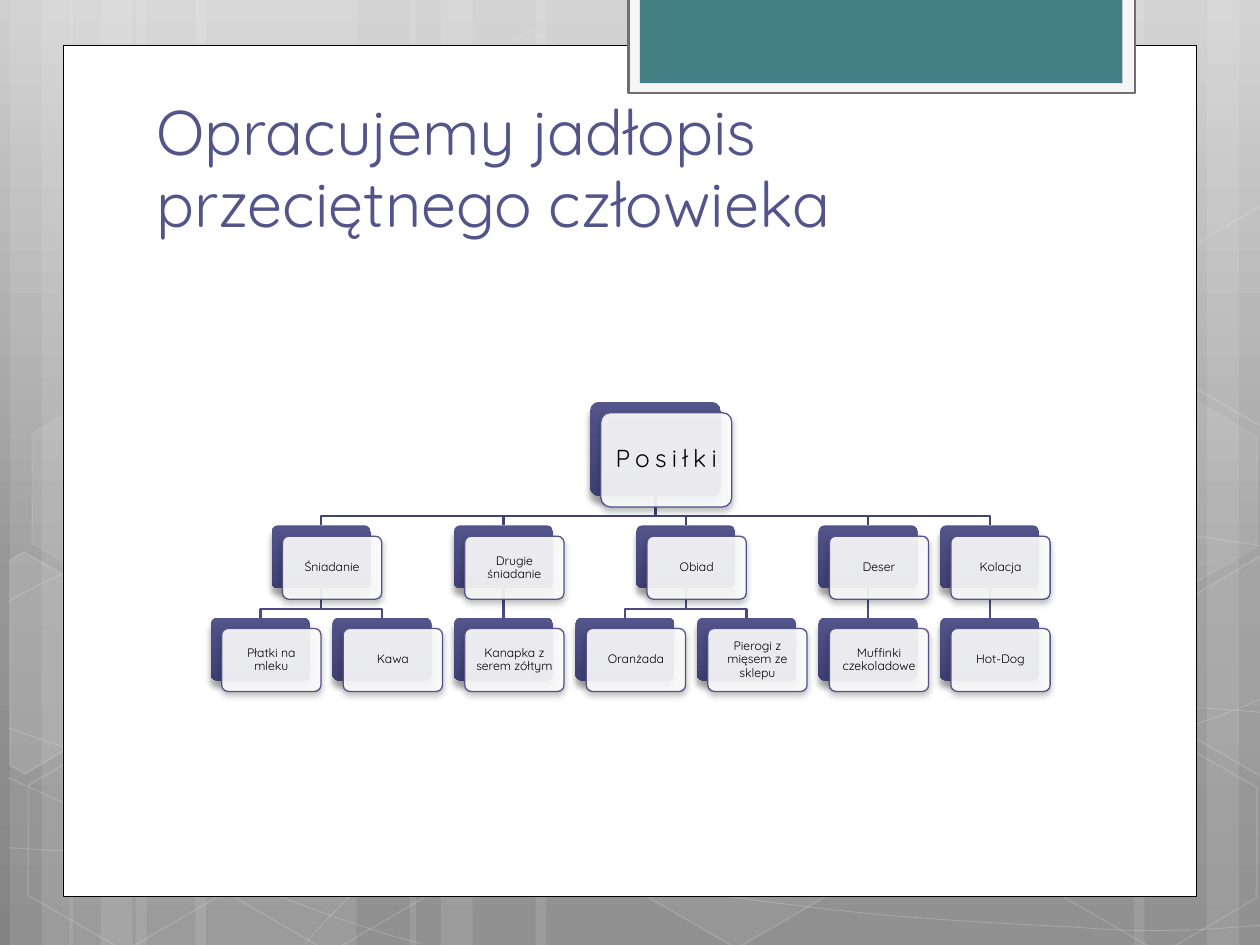
from lxml.etree import SubElement
from pptx import Presentation
from pptx.dml.color import RGBColor
from pptx.enum.shapes import MSO_CONNECTOR, MSO_SHAPE
from pptx.enum.text import MSO_ANCHOR, PP_ALIGN
from pptx.oxml.ns import qn
from pptx.util import Cm, Pt

FONT = "Quicksand"
COLORS = {
    "white": "FFFFFF", "black": "000000", "indigo": "53548A", "deep": "3E3F72",
    "branch": "42436F", "twig": "4B4C7D", "teal": "438086",
    "frame": "F5F5F5", "frame_line": "6F6F6F",
    "sky": "CFCFCF", "haze": "969696", "ground": "848484",
}

TITLE = "Opracujemy jadłopis przeciętnego człowieka"
ROOT = "Posiłki"
MEALS = [
    ("Śniadanie", ["Płatki na mleku", "Kawa"]),
    ("Drugie śniadanie", ["Kanapka z serem zółtym"]),
    ("Obiad", ["Oranżada", "Pierogi z mięsem ze sklepu"]),
    ("Deser", ["Muffinki czekoladowe"]),
    ("Kolacja", ["Hot-Dog"]),
]

# All lengths below are centimetres.
SLIDE_WIDTH, SLIDE_HEIGHT = 25.4, 19.05
STRIPES = [  # width, left edges
    (4.45, [2.74, 3.94, 18.62]),
    (1.27, [0.2, 1.4, 24.33, 8.26]),
    (2.12, [0.84, 2.03, 22.86, 8.89]),
    (7.82, [10.8]),
]
CURVES = [  # start point, then three points for each Bezier segment
    [(0.18, 17.09), (1.55, 17.17), (2.92, 17.25), (4.83, 17.22),
     (6.73, 17.2), (9.09, 17.15), (11.63, 16.89), (14.17, 16.64), (17.78, 16.15),
     (20.12, 15.67), (22.43, 15.19), (24.82, 14.43), (25.58, 14)],
    [(0.18, 12.12), (0.91, 11.71), (1.65, 11.33), (3.07, 10.95),
     (4.52, 10.57), (6.58, 10.01), (8.81, 9.83), (11.07, 9.65), (13.82, 9.63),
     (16.61, 9.83), (19.41, 10.03), (24.05, 10.82), (25.58, 11.02)],
    [(0.15, 15.67), (3.23, 17.07), (6.27, 18.47), (8.48, 19.02)],
    [(0.18, 14.68), (0.97, 14.96), (1.78, 15.24), (3.25, 15.65),
     (4.72, 16.03), (6.93, 16.66), (9.07, 17.09), (11.18, 17.53), (13.84, 17.98),
     (15.95, 18.24), (18.06, 18.52), (20.32, 18.62), (21.67, 18.69),
     (22.99, 18.8), (23.34, 18.75), (24, 18.75), (24.66, 18.72), (25.12, 18.67),
     (25.58, 18.64)],
    [(6.15, 19.02), (6.6, 18.52), (7.06, 18.01), (7.67, 17.55),
     (8.28, 17.09), (9.14, 16.59), (9.86, 16.23), (10.57, 15.88), (11, 15.72),
     (11.94, 15.47), (12.85, 15.22), (14.55, 14.86), (15.44, 14.68),
     (16.36, 14.5), (16.48, 14.45), (17.27, 14.45), (18.08, 14.38), (19.3, 14.3),
     (20.17, 14.27), (21.06, 14.25), (22.5, 14.27), (22.5, 14.27),
     (23.07, 14.27), (23.64, 14.27), (24.21, 14.27), (24.66, 14.3), (25.1, 14.33),
     (25.32, 14.35), (25.55, 14.38), (25.48, 14.35), (25.55, 14.38)],
]
HEXAGONS = [  # left, top, fill opacity, line opacity
    (8.48, 0.91, 4, 8), (12.62, 14.96, 6, 12), (0.28, 15.01, 0, 12),
    (0.36, 7.92, 7, 8), (4.42, 15.04, 0, 12), (19.13, 11.51, 10, 12),
    (21.18, 15.06, 0, 12), (21.18, 7.98, 7, 8),
]
CUT_HEXAGONS = [  # fill opacity, corners
    (10, [(0.2, 11.3), (0.48, 11.13), (2.44, 12.24), (2.41, 14.48), (0.51, 15.6), (0.2, 15.42)]),
    (4, [(23.52, 12.32), (25.43, 11.2), (25.63, 11.33), (25.63, 15.57), (25.45, 15.67), (23.52, 14.55)]),
    (0, [(23.52, 5.26), (25.43, 4.14), (25.65, 4.27), (25.63, 8.51), (25.45, 8.61), (23.52, 7.49)]),
]
PANELS = [  # left, top, width, height, fill, line, line width
    (1.27, 0.91, 22.86, 17.17, "white", "black", 0.5),
    (12.67, -0.05, 10.21, 1.93, "frame", "frame_line", 1.25),
    (12.9, -0.05, 9.73, 1.73, "teal", None, 0),
]

ROOT_SIZE, NODE_SIZE = (2.64, 1.9), (2, 1.27)
ROOT_TOP, MEAL_TOP, DISH_TOP = 8.1, 10.59, 12.45
FIRST_CENTER, DISH_PITCH = 5.25, 2.45
CARD_OFFSET, BEND_GAP = 0.22, 0.18


def rgb(name):
    return RGBColor.from_string(COLORS[name])


def add_alpha(solid_fill, opacity):
    SubElement(solid_fill[0], qn("a:alpha"), val=str(opacity * 1000))


def set_gradient(fill, owner, stops):
    """Give fill, found inside the XML element owner, a downward gradient."""
    fill.gradient()
    fill.gradient_angle = 270
    stop_list = next(owner.iter(qn("a:gsLst")))
    stop_list.clear()
    for position, name in stops:
        stop = SubElement(stop_list, qn("a:gs"), pos=str(position * 1000))
        SubElement(stop, qn("a:srgbClr"), val=COLORS[name])


def style(shape, fill=None, line=None, width=1, fill_opacity=100, line_opacity=100):
    shape.shadow.inherit = False
    properties = shape.element.spPr
    if fill and fill_opacity:
        shape.fill.solid()
        shape.fill.fore_color.rgb = rgb(fill)
        add_alpha(properties.find(qn("a:solidFill")), fill_opacity)
    else:
        shape.fill.background()
    if line:
        shape.line.color.rgb = rgb(line)
        shape.line.width = Pt(width)
        add_alpha(properties.find(qn("a:ln")).find(qn("a:solidFill")), line_opacity)
    else:
        shape.line.fill.background()


def add_shadow(shape, opacity, blur, distance):
    effects = shape.element.spPr.find(qn("a:effectLst"))
    shadow = SubElement(effects, qn("a:outerShdw"), blurRad=str(Pt(blur)),
                        dist=str(Pt(distance)), dir="5400000", rotWithShape="0")
    color = SubElement(shadow, qn("a:srgbClr"), val=COLORS["black"])
    SubElement(color, qn("a:alpha"), val=str(opacity * 1000))


def add_box(shapes, kind, *bounds):
    return shapes.add_shape(kind, *(Cm(length) for length in bounds))


def add_path(shapes, points, close=False):
    corners = [(Cm(x), Cm(y)) for x, y in points]
    builder = shapes.build_freeform(*corners[0])
    builder.add_line_segments(corners[1:], close=close)
    return builder.convert_to_shape()


def bend(shape):
    """Turn each three straight segments into one cubic Bezier segment."""
    segments = list(shape.element.iter(qn("a:lnTo")))
    for first, second, third in zip(*[iter(segments)] * 3):
        first.tag = qn("a:cubicBezTo")
        for segment in (second, third):
            first.append(segment[0])
            segment.getparent().remove(segment)


def write(box, text, size, color, spacing):
    frame = box.text_frame
    frame.word_wrap = True
    frame.vertical_anchor = MSO_ANCHOR.MIDDLE
    frame.text = text
    para = frame.paragraphs[0]
    para.line_spacing = spacing
    span = para.runs[0]
    span.font.name, span.font.size = FONT, Pt(size)
    span.font.color.rgb = rgb(color)
    return para


def add_node(shapes, text, center, top, size, points, inset, tracking=0):
    width, height = size
    left = center - width / 2
    back = add_box(shapes, MSO_SHAPE.ROUNDED_RECTANGLE, left, top, width, height)
    style(back)
    set_gradient(back.fill, back.element, [(0, "indigo"), (100, "deep")])
    add_shadow(back, 34, 3.5, 4)
    card = add_box(shapes, MSO_SHAPE.ROUNDED_RECTANGLE,
                   left + CARD_OFFSET, top + CARD_OFFSET, width, height)
    style(card, "white", "indigo", 0.75, fill_opacity=90)
    add_shadow(card, 28, 4, 2)
    back.adjustments[0] = card.adjustments[0] = 0.1
    frame = card.text_frame
    frame.margin_left = frame.margin_right = frame.margin_top = frame.margin_bottom = Cm(inset)
    para = write(card, text, points, "black", 0.9)
    para.alignment = PP_ALIGN.CENTER
    if tracking:
        para.runs[0].font._element.set("spc", str(tracking * 100))


def add_branch(shapes, start_x, start_y, end_x, end_y, color):
    if abs(start_x - end_x) < 0.01:
        line = shapes.add_connector(MSO_CONNECTOR.STRAIGHT, Cm(start_x), Cm(start_y), Cm(end_x), Cm(end_y))
        line.line.color.rgb = rgb(color)
        line.line.width = Pt(1.25)
        SubElement(line.element.spPr, qn("a:effectLst"))
    else:
        turn = end_y - BEND_GAP
        elbow = add_path(shapes, [(start_x, start_y), (start_x, turn), (end_x, turn), (end_x, end_y)])
        style(elbow, line=color, width=1.25)


def draw_backdrop(slide):
    shapes = slide.shapes
    set_gradient(slide.background.fill, slide.element, [(0, "sky"), (62, "haze"), (100, "ground")])
    for width, lefts in STRIPES:
        for left in lefts:
            style(add_box(shapes, MSO_SHAPE.RECTANGLE, left, 0, width, SLIDE_HEIGHT), "white", fill_opacity=10)
    for points in CURVES:
        curve = add_path(shapes, points)
        bend(curve)
        style(curve, line="white", width=0.5, line_opacity=20)
    for left, top, fill_opacity, line_opacity in HEXAGONS:
        hexagon = add_box(shapes, MSO_SHAPE.HEXAGON, left, top, 4.45, 3.86)
        hexagon.adjustments[0] = 0.285
        hexagon.rotation = 30
        style(hexagon, "white", "white", 1, fill_opacity, line_opacity)
    for fill_opacity, corners in CUT_HEXAGONS:
        style(add_path(shapes, corners, close=True), "white", "white", 1, fill_opacity, 12)
    for *bounds, fill, line, width in PANELS:
        style(add_box(shapes, MSO_SHAPE.RECTANGLE, *bounds), fill, line, width)


def draw_meal_tree(shapes):
    meals, dishes, branches = [], [], []
    for meal, names in MEALS:
        centers = [FIRST_CENTER + DISH_PITCH * (len(dishes) + i) for i in range(len(names))]
        center = (centers[0] + centers[-1]) / 2
        meals.append((meal, center, MEAL_TOP))
        dishes += [(name, x, DISH_TOP) for name, x in zip(names, centers)]
        branches += [(center, MEAL_TOP + NODE_SIZE[1], x, DISH_TOP, "twig") for x in centers]
    root_center = (meals[0][1] + meals[-1][1]) / 2
    branches += [(root_center, ROOT_TOP + ROOT_SIZE[1], x, MEAL_TOP, "branch") for _, x, _ in meals]
    for branch in branches:
        add_branch(shapes, *branch)
    add_node(shapes, ROOT, root_center, ROOT_TOP, ROOT_SIZE, 14, 0.2, tracking=3)
    for node in meals + dishes:
        add_node(shapes, *node, NODE_SIZE, 7, 0.11)


deck = Presentation()
deck.slide_width, deck.slide_height = Cm(SLIDE_WIDTH), Cm(SLIDE_HEIGHT)
page = deck.slides.add_slide(deck.slide_layouts[6])
draw_backdrop(page)
title = page.shapes.add_textbox(Cm(2.9), Cm(1.93), Cm(19.5), Cm(3))
write(title, TITLE, 36, "indigo", 0.95)
draw_meal_tree(page.shapes)
deck.save("out.pptx")
